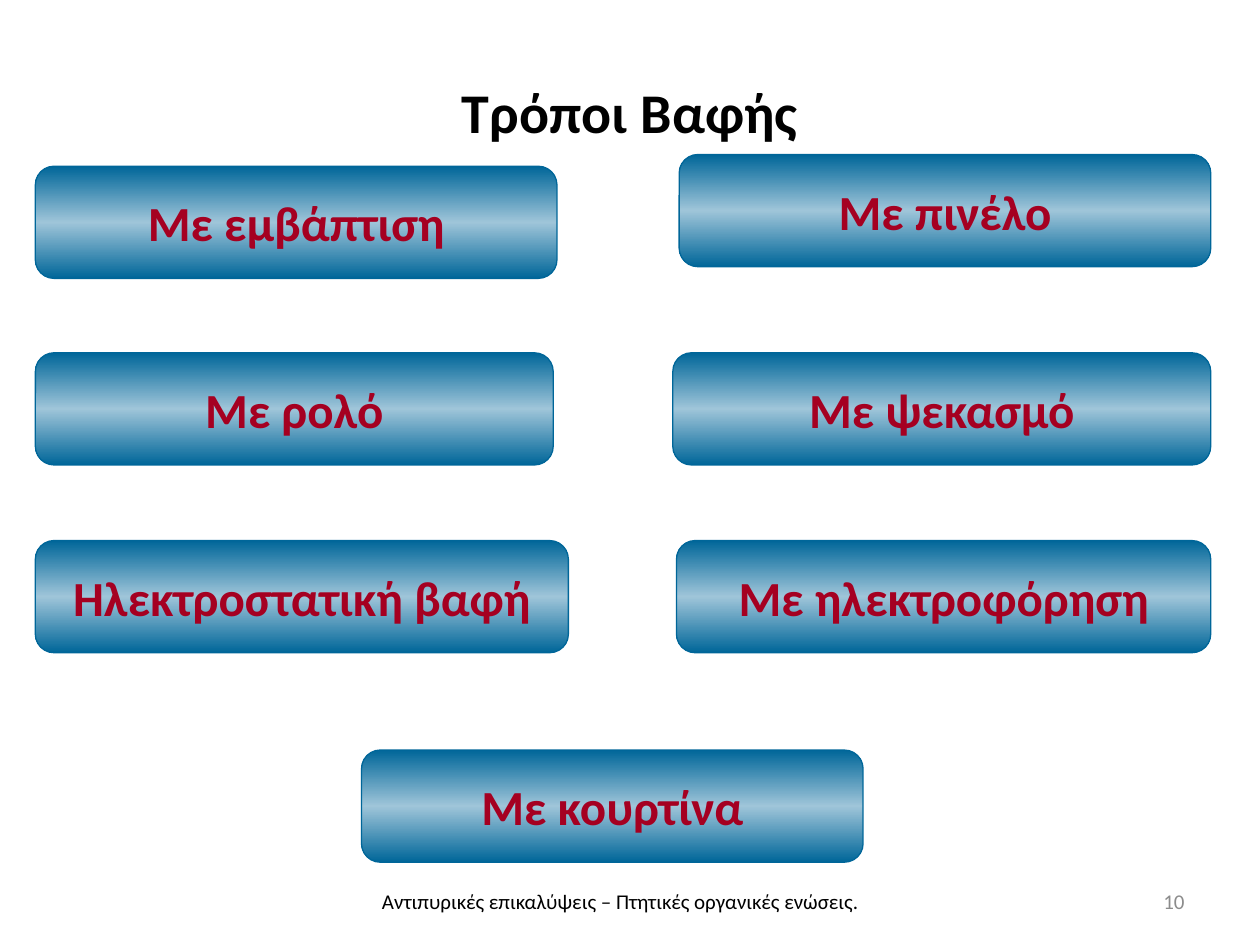
from copy import deepcopy

from pptx import Presentation
from pptx.dml.color import RGBColor
from pptx.enum import shapes, text
from pptx.util import Pt

TITLE = "Τρόποι Βαφής"
FOOTER = "Αντιπυρικές επικαλύψεις – Πτητικές οργανικές ενώσεις."
NUMBER = "10"

# Methods by column: (label, top, width)
LEFT = [
    ("Με εμβάπτιση", 95, 298.1),
    ("Με ρολό", 201.6, 295.9),
    ("Ηλεκτροστατική βαφή", 308.9, 304.6),
]
RIGHT = [
    ("Με πινέλο", 88.3, 303.8),
    ("Με ψεκασμό", 201.6, 307.4),
    ("Με ηλεκτροφόρηση", 308.9, 305.3),
]
LAST = ("Με κουρτίνα", 428.6, 286.6)

EDGE_L, EDGE_R, LAST_X = 20.2, 691.9, 206.6
HIGH = 64.1
FOOT_Y, FOOT_H = 500.4, 28.8

THEME = {
    "font": "Calibri",
    "black": "000000", "grey": "8C8C8C", "red": "A50021",
    "edge": "006699", "glow": "9FC5D9",
    "title": 32, "label": 28, "small": 12,
}


def rgb(name):
    return RGBColor.from_string(THEME[name])


def write(shape, words, size, color, align="CENTER", bold=False, wrap=True):
    frame = shape.text_frame
    frame.word_wrap = wrap
    frame.vertical_anchor = text.MSO_ANCHOR.MIDDLE
    para = frame.paragraphs[0]
    para.text = words
    para.alignment = text.PP_ALIGN[align]
    font = para.font
    font.name, font.size, font.bold = THEME["font"], Pt(THEME[size]), bold
    font.color.rgb = rgb(color)


def shade(fill):
    """Fill from edge colour through a pale middle and back, top to bottom."""
    fill.gradient()
    fill.gradient_angle = 90
    first = fill.gradient_stops[0]._gs
    first.addnext(deepcopy(first))
    for stop, place, name in zip(fill.gradient_stops, (0, 0.5, 1),
                                 ("edge", "glow", "edge")):
        stop.position = place
        stop.color.rgb = rgb(name)


def add_box(group, label, x, y, wide):
    box = group.shapes.add_shape(shapes.MSO_SHAPE.ROUNDED_RECTANGLE,
                                 Pt(x), Pt(y), Pt(wide), Pt(HIGH))
    box.shadow.inherit = False
    shade(box.fill)
    box.line.color.rgb = rgb("edge")
    box.line.width = Pt(0.75)
    write(box, label, "label", "red", bold=True, wrap=False)


def add_text(slide, area, *args, **style):
    write(slide.shapes.add_textbox(*map(Pt, area)), *args, **style)


def main():
    deck = Presentation()
    deck.slide_width, deck.slide_height = Pt(720), Pt(540)
    slide = deck.slides.add_slide(deck.slide_layouts[6])

    add_text(slide, (36, 9.4, 648, 108), TITLE, "title", "black", bold=True)

    group = slide.shapes.add_group_shape()
    for label, y, wide in LEFT:
        add_box(group, label, EDGE_L, y, wide)
    for label, y, wide in RIGHT:
        add_box(group, label, EDGE_R - wide, y, wide)
    label, y, wide = LAST
    add_box(group, label, LAST_X, y, wide)

    add_text(slide, (156.2, FOOT_Y, 396.7, FOOT_H), FOOTER, "small", "black")
    add_text(slide, (516.2, FOOT_Y, 167.8, FOOT_H), NUMBER, "small", "grey",
             align="RIGHT")
    deck.save("out.pptx")


if __name__ == "__main__":
    main()
